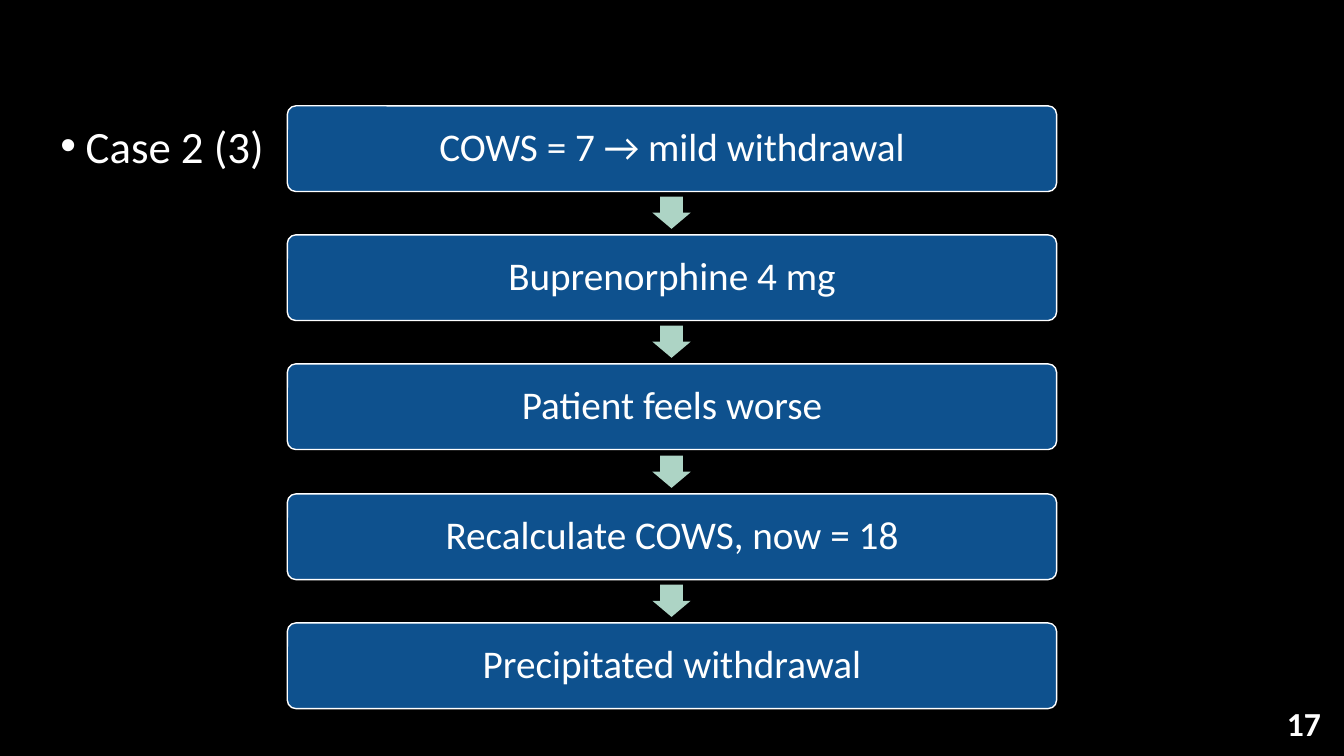
from dataclasses import dataclass

from pptx import Presentation
from pptx.dml.color import RGBColor
from pptx.enum.shapes import MSO_SHAPE as Kind
from pptx.enum.text import MSO_ANCHOR as Anchor, MSO_AUTO_SIZE as Fit, PP_ALIGN as Align
from pptx.oxml.ns import qn
from pptx.shapes.autoshape import Shape
from pptx.slide import Slide
from pptx.util import Emu, Pt

SCALE = 9144  # EMU per px, 100 px to the inch
FONT = "Calibri"
COLORS = {"back": "000000", "text": "FFFFFF", "box": "0E518E", "arrow": "ADD4C5"}

# Flow chart geometry
LEFT, TOP, WIDE, HIGH = 285, 105, 763, 85
SPAN = 513  # first box top to last box top
ARROW_W, ARROW_H = 32, 38
INSET = 15


@dataclass
class Step:
    text: str
    top: int


def px(size: int) -> Emu:
    return Emu(size * SCALE)


def color(name: str) -> RGBColor:
    return RGBColor.from_string(COLORS[name])


def style(para, size: int, bold: bool = False) -> None:
    font = para.font
    font.name, font.size, font.bold = FONT, Pt(size), bold
    font.color.rgb = color("text")


def add_shape(slide: Slide, kind: Kind, place: tuple[int, int, int, int], fill: str) -> Shape:
    shape = slide.shapes.add_shape(kind, *map(px, place))
    shape.shadow.inherit = False
    shape.fill.solid()
    shape.fill.fore_color.rgb = color(fill)
    shape.line.fill.background()
    return shape


def add_step(slide: Slide, step: Step) -> None:
    box = add_shape(slide, Kind.ROUNDED_RECTANGLE, (LEFT, step.top, WIDE, HIGH), "box")
    box.adjustments[0] = 0.1
    box.line.color.rgb = color("text")
    box.line.width = Pt(1)
    frame = box.text_frame
    frame.word_wrap = True
    frame.vertical_anchor = Anchor.MIDDLE
    frame.margin_left = frame.margin_right = px(INSET)
    frame.margin_top = frame.margin_bottom = px(INSET)
    para = frame.paragraphs[0]
    para.text = step.text
    para.alignment = Align.CENTER
    para.line_spacing = 0.9
    style(para, 28)


def add_arrow(slide: Slide, above: Step, below: Step) -> None:
    mid = (above.top + HIGH + below.top) // 2
    left = LEFT + (WIDE - ARROW_W) // 2
    place = (left, mid - ARROW_H // 2, ARROW_W, ARROW_H)
    arrow = add_shape(slide, Kind.RIGHT_ARROW, place, "arrow")
    arrow.adjustments[0], arrow.adjustments[1] = 0.6, 0.5
    arrow.rotation = 90


def add_topic(slide: Slide, text: str) -> None:
    body = slide.placeholders[1]
    body.left, body.top, body.width, body.height = map(px, (50, 124, 1233, 575))
    frame = body.text_frame
    frame.auto_size = Fit.NONE
    para = frame.paragraphs[0]
    para.text = text
    props = para._p.get_or_add_pPr()
    props.set("marL", str(px(25)))
    props.set("indent", str(px(-25)))
    bullet = props.makeelement(qn("a:buChar"), {"char": "•"})
    props.append(bullet)
    para.line_spacing = Pt(30)
    para.space_before, para.space_after = Pt(0), Pt(6)
    style(para, 32)


def add_number(slide: Slide, text: str) -> None:
    box = slide.shapes.add_textbox(*map(px, (1232, 703, 88, 39)))
    frame = box.text_frame
    frame.word_wrap = True
    frame.vertical_anchor = Anchor.BOTTOM
    para = frame.paragraphs[0]
    para.text = text
    para.alignment = Align.RIGHT
    style(para, 24, bold=True)


def main() -> None:
    deck = Presentation()
    deck.slide_width, deck.slide_height = px(1333), px(750)
    slide = deck.slides.add_slide(deck.slide_layouts[1])
    slide.background.fill.solid()
    slide.background.fill.fore_color.rgb = color("back")
    title = slide.shapes.title.element
    title.getparent().remove(title)

    # Page number and topic
    add_number(slide, "17")
    add_topic(slide, "Case 2 (3)")

    # Flow chart
    texts = [
        "COWS = 7 → mild withdrawal",
        "Buprenorphine 4 mg",
        "Patient feels worse",
        "Recalculate COWS, now = 18",
        "Precipitated withdrawal",
    ]
    gaps = len(texts) - 1
    steps = [Step(text, TOP + round(i * SPAN / gaps)) for i, text in enumerate(texts)]
    for step in steps:
        add_step(slide, step)
    for above, below in zip(steps, steps[1:]):
        add_arrow(slide, above, below)

    deck.save("out.pptx")


if __name__ == "__main__":
    main()
